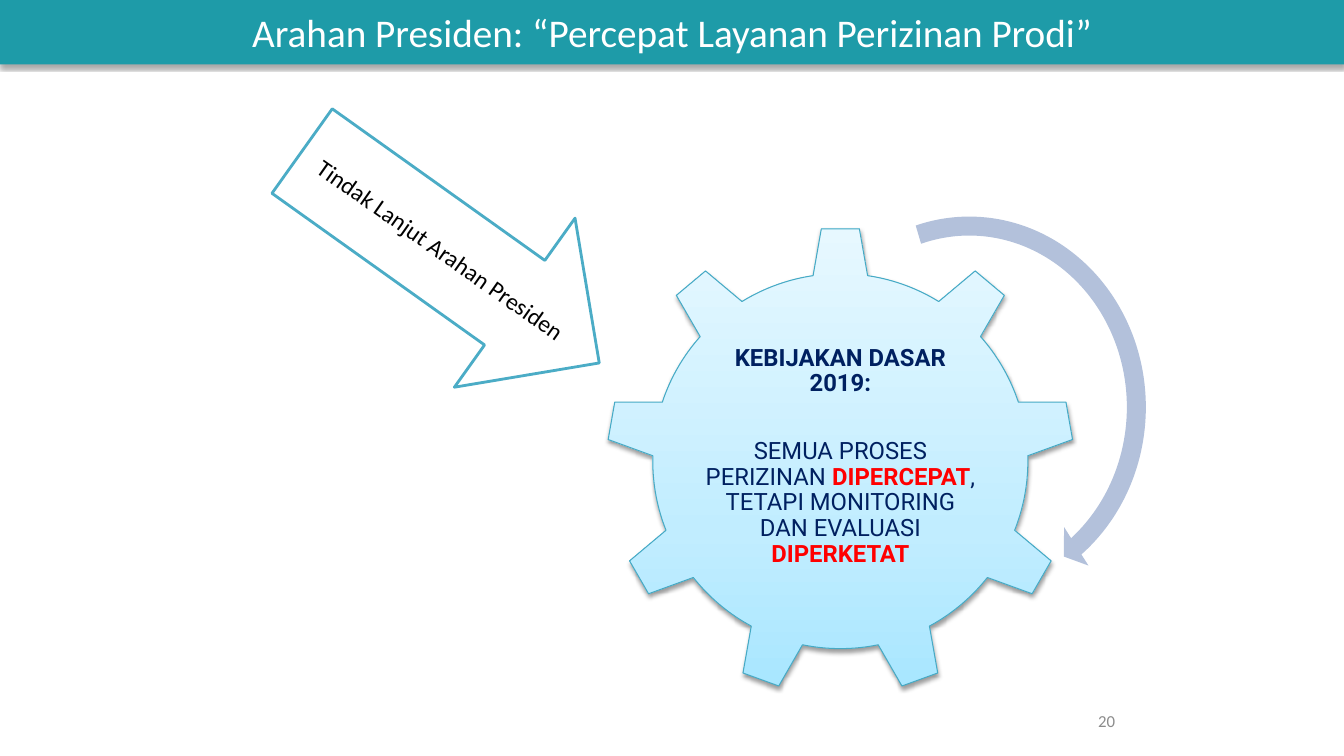
from pptx import Presentation
from pptx.dml.color import RGBColor
from pptx.enum.shapes import MSO_SHAPE as Kind
from pptx.enum.text import MSO_ANCHOR as Anchor, PP_ALIGN as Align
from pptx.oxml import parse_xml
from pptx.util import Inches, Pt
from copy import deepcopy

WIDE, HIGH = 13.33, 7.5
NAVY, RED = "002060", "FF0000"
NS = "http://schemas.openxmlformats.org/drawingml/2006/main"


def tint(code):
    """Turn a hex string into a colour."""
    return RGBColor.from_string(code)


def part(box, x, y, w, h):
    """Give the inner box at shares of an outer box."""
    left, top, wide, high = box
    return left + x * wide, top + y * high, w * wide, h * high


def draw(slide, kind, box, fill=None, line=None, weight=1):
    """Add a preset shape with a plain fill and an optional outline."""
    shape = slide.shapes.add_shape(kind, *map(Inches, box))
    shape.shadow.inherit = False
    if fill:
        shape.fill.solid()
        shape.fill.fore_color.rgb = tint(fill)
    if line:
        shape.line.color.rgb = tint(line)
        shape.line.width = Pt(weight)
    else:
        shape.line.fill.background()
    return shape


def shade(shape, alpha, blur, dist):
    """Cast a soft black shadow straight down."""
    effects = shape._element.spPr.find(f"{{{NS}}}effectLst")
    effects.append(parse_xml(
        f'<a:outerShdw xmlns:a="{NS}" blurRad="{Pt(blur)}" dist="{Pt(dist)}" '
        f'dir="5400000" rotWithShape="0"><a:srgbClr val="000000">'
        f'<a:alpha val="{alpha * 1000}"/></a:srgbClr></a:outerShdw>'))


def blend(shape, stops):
    """Fill a shape with colour stops running from bottom to top."""
    fill = shape.fill
    fill.gradient()
    fill.gradient_angle = 90
    group = shape._element.spPr.find(f".//{{{NS}}}gsLst")
    for _ in stops[2:]:
        group.append(deepcopy(group[-1]))
    for stop, (place, code) in zip(fill.gradient_stops, stops):
        stop.position = place
        stop.color.rgb = tint(code)


def style(run, size, font, color, bold=False):
    """Set the look of a run."""
    run.font.size, run.font.name, run.font.bold = Pt(size), font, bold
    run.font.color.rgb = tint(color)


def write(frame, text, size, color, align=Align.CENTER):
    """Put one Calibri line in a frame, centred in height."""
    frame.word_wrap = True
    frame.vertical_anchor = Anchor.MIDDLE
    frame.text = text
    para = frame.paragraphs[0]
    para.alignment = align
    style(para.runs[0], size, "Calibri", color)


def label(slide, box):
    """Add an empty text box and return it."""
    return slide.shapes.add_textbox(*map(Inches, box))


def banner(slide, box):
    """Draw the title band."""
    band = draw(slide, Kind.RECTANGLE, box, "1E9BA8")
    shade(band, 35, 3.1, 1.8)
    write(band.text_frame, "Arahan Presiden: “Percepat Layanan Perizinan Prodi”",
          28, "FFFFFF")


def policy(slide, box):
    """Draw the gear with its policy text and the turning arrow."""
    gear = draw(slide, Kind.GEAR_9, box, line="46AAC5", weight=0.75)
    blend(gear, [(0, "A7E6FF"), (0.35, "C1EDFF"), (1, "E7F8FF")])
    shade(gear, 38, 3.1, 1.6)

    frame = label(slide, part(box, 0.2, 0.23, 0.6, 0.52)).text_frame
    frame.word_wrap = True
    frame.vertical_anchor = Anchor.MIDDLE
    frame.margin_left = frame.margin_right = Inches(0.03)
    frame.margin_top = frame.margin_bottom = Inches(0.02)
    head, body = frame.paragraphs[0], frame.add_paragraph()
    body.space_before = Pt(30)
    texts = [
        (head, [("KEBIJAKAN DASAR 2019:", NAVY, True)]),
        (body, [("SEMUA PROSES PERIZINAN ", NAVY, False),
                ("DIPERCEPAT", RED, True),
                (", TETAPI MONITORING DAN EVALUASI ", NAVY, False),
                ("DIPERKETAT", RED, True)]),
    ]
    for para, pieces in texts:
        para.alignment = Align.CENTER
        para.line_spacing = 0.9
        for text, color, bold in pieces:
            run = para.add_run()
            run.text = text
            style(run, 17, "Roboto", color, bold)

    turn = draw(slide, Kind.CIRCULAR_ARROW,
                part(box, 0.37, -0.05, 0.81, 0.87), "B3C1DB")
    for i, value in enumerate([0.05, 3.13, 31.47, 152.15, 0.06]):
        turn.adjustments[i] = value


def follow(slide, box):
    """Draw the slanted arrow and its label."""
    arrow = draw(slide, Kind.RIGHT_ARROW, box, "FFFFFF", "4BACC6", 2)
    arrow.rotation = 35.5
    note = label(slide, part(box, 0.06, 0.31, 0.82, 0.32))
    note.rotation = 35.1
    frame = note.text_frame
    frame.margin_left = frame.margin_right = 0
    write(frame, "Tindak Lanjut Arahan Presiden", 17, "000000")
    frame.paragraphs[0].line_spacing = 0.9


def number(slide, box):
    """Write the page number."""
    write(label(slide, box).text_frame, "20", 12, "8C8C8C", Align.RIGHT)


def main():
    """Build the slide and save it."""
    deck = Presentation()
    deck.slide_width, deck.slide_height = Inches(WIDE), Inches(HIGH)
    slide = deck.slides.add_slide(deck.slide_layouts[6])
    policy(slide, (6.01, 2.25, 4.65, 4.65))
    follow(slide, (2.66, 1.52, 3.62, 2.06))
    number(slide, (8.83, 6.95, 2.33, 0.4))
    banner(slide, (0, 0, WIDE, 0.64))
    deck.save("out.pptx")


if __name__ == "__main__":
    main()
